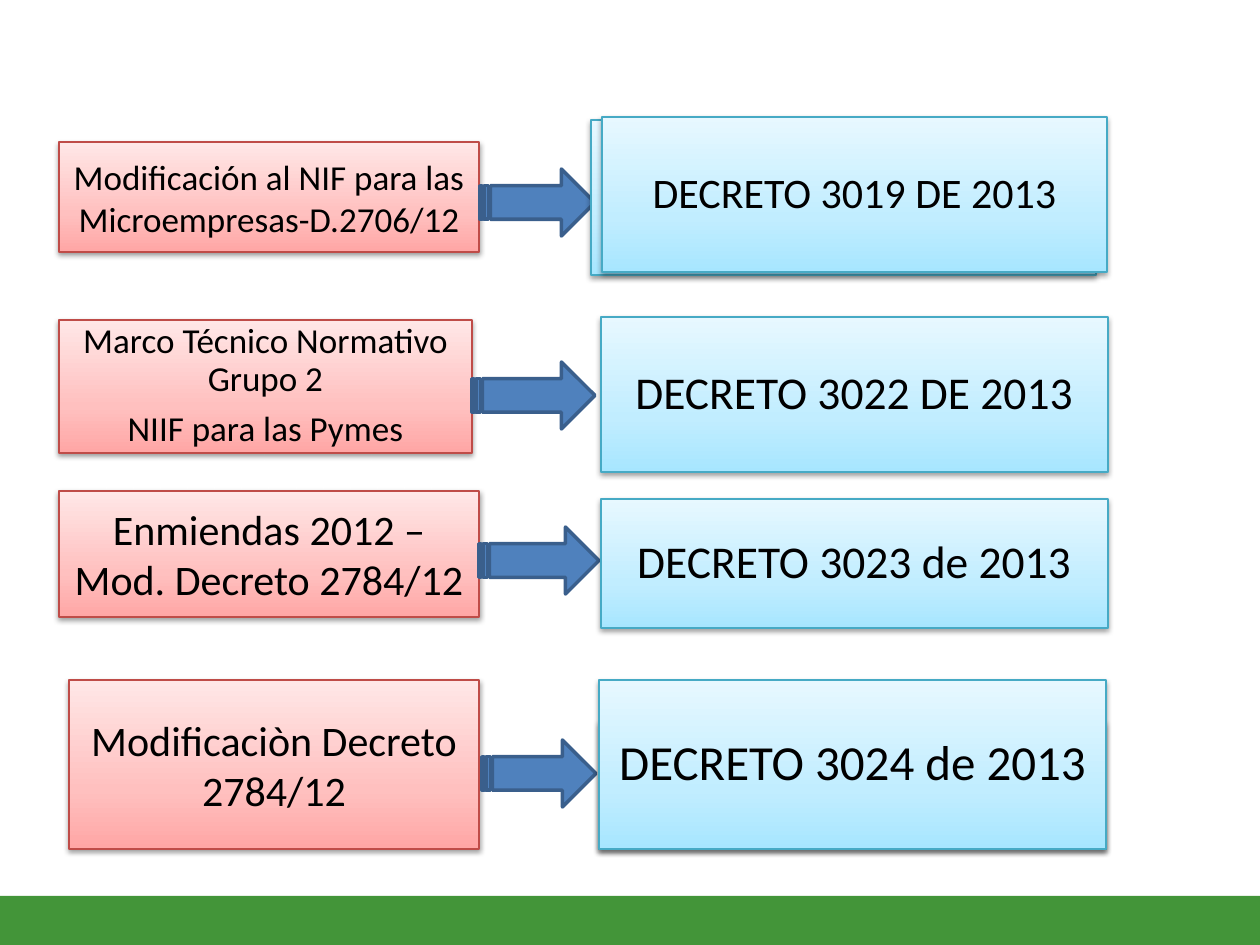
from dataclasses import dataclass
from typing import NamedTuple, Optional

from lxml import etree
from pptx import Presentation
from pptx.dml.color import RGBColor
from pptx.enum.shapes import MSO_SHAPE
from pptx.enum.text import MSO_ANCHOR, PP_ALIGN
from pptx.oxml import parse_xml
from pptx.oxml.ns import nsdecls
from pptx.util import Emu, Pt

RECT = MSO_SHAPE.RECTANGLE
ARROW = MSO_SHAPE.STRIPED_RIGHT_ARROW
MIDDLE = MSO_ANCHOR.MIDDLE
CENTER = PP_ALIGN.CENTER
PX = 914400 / 126


class Tint(NamedTuple):
    stops: tuple[tuple[int, str], ...]
    line: str


@dataclass(frozen=True)
class Theme:
    font: str = "Calibri"
    ink: str = "000000"
    bar: str = "439539"
    arrow: str = "4F81BD"
    edge: str = "3A5F8C"
    small: int = 20
    mid: int = 24
    large: int = 26
    huge: int = 28
    red: Tint = Tint(((0, "FFA6A5"), (35, "FFC0BF"), (100, "FFE7E7")), "BF4C48")
    blue: Tint = Tint(((0, "A7E6FF"), (35, "C1EDFF"), (100, "E7F8FF")), "46AAC5")


THEME = Theme()


class Box(NamedTuple):
    x: int
    y: int
    w: int
    h: int


class Label(NamedTuple):
    lines: tuple[str, ...]
    size: int
    tight: bool = True


class Row(NamedTuple):
    cause: Box
    topic: Label
    arrow: Box
    decree: Box
    title: Label
    back: Optional[Box] = None


ROWS = (
    Row(Box(59, 142, 420, 110),
        Label(("Modificación al NIF para las Microempresas-D.2706/12",), THEME.small, False),
        Box(480, 169, 115, 67), Box(602, 117, 505, 155),
        Label(("DECRETO 3019 DE 2013",), THEME.mid), Box(591, 120, 505, 155)),
    Row(Box(59, 320, 413, 133),
        Label(("Marco Técnico Normativo Grupo 2", "NIIF para las Pymes"), THEME.small),
        Box(472, 362, 123, 67), Box(601, 317, 507, 155),
        Label(("DECRETO 3022 DE 2013",), THEME.large)),
    Row(Box(59, 491, 420, 126),
        Label(("Enmiendas 2012 – Mod. Decreto 2784/12",), THEME.mid, False),
        Box(479, 527, 120, 67), Box(601, 499, 507, 129),
        Label(("DECRETO 3023 de 2013",), THEME.large)),
    Row(Box(69, 680, 410, 169),
        Label(("Modificaciòn Decreto 2784/12",), THEME.mid, False),
        Box(482, 740, 114, 67), Box(599, 680, 507, 169),
        Label(("DECRETO 3024 de 2013",), THEME.huge), Box(599, 722, 507, 127)),
)


def px(n: int) -> Emu:
    return Emu(round(n * PX))


def add_flat(slide, kind, box: Box, fill: str, edge: Optional[str] = None):
    shape = slide.shapes.add_shape(kind, *map(px, box))
    shape.shadow.inherit = False
    shape.fill.solid()
    shape.fill.fore_color.rgb = RGBColor.from_string(fill)
    if edge:
        shape.line.color.rgb = RGBColor.from_string(edge)
        shape.line.width = Pt(2)
    else:
        shape.line.fill.background()
    return shape


def shade(shape, stops: tuple[tuple[int, str], ...]) -> None:
    """Fill upward through the stops and cast a soft shadow below."""
    shape.fill.gradient()
    shape.fill.gradient_angle = 90
    props = shape.element.spPr
    marks = props.find(".//{*}gsLst")
    for old in list(marks):
        marks.remove(old)
    for pos, tone in stops:
        marks.append(parse_xml(
            f'<a:gs {nsdecls("a")} pos="{pos * 1000}"><a:srgbClr val="{tone}"/></a:gs>'))
    cast = etree.SubElement(
        props.find("{*}effectLst"), marks.tag.replace("gsLst", "outerShdw"),
        blurRad=str(Pt(3.1)), dist=str(Pt(1.6)), dir="5400000", rotWithShape="0")
    cast.append(parse_xml(
        f'<a:srgbClr {nsdecls("a")} val="{THEME.ink}"><a:alpha val="38000"/></a:srgbClr>'))


def add_text(shape, label: Label) -> None:
    frame = shape.text_frame
    frame.word_wrap = True
    frame.vertical_anchor = MIDDLE
    if label.tight:
        frame.margin_left = frame.margin_right = px(2)
        frame.margin_top = frame.margin_bottom = px(2)
    frame.text = "\n".join(label.lines)
    for para in frame.paragraphs:
        para.alignment = CENTER
        para.font.name = THEME.font
        para.font.size = Pt(label.size)
        para.font.color.rgb = RGBColor.from_string(THEME.ink)
        if label.tight:
            para.line_spacing = 0.9
            para.space_after = Pt(label.size * 0.35)


def add_card(slide, box: Box, tint: Tint, label: Optional[Label] = None) -> None:
    shape = add_flat(slide, RECT, box, tint.stops[0][1], tint.line)
    shape.line.width = Pt(0.75)
    shade(shape, tint.stops)
    if label:
        add_text(shape, label)


def add_row(slide, row: Row) -> None:
    add_card(slide, row.cause, THEME.red, row.topic)
    add_flat(slide, ARROW, row.arrow, THEME.arrow, THEME.edge)
    if row.back:
        add_card(slide, row.back, THEME.blue)
    add_card(slide, row.decree, THEME.blue, row.title)


def main() -> None:
    deck = Presentation()
    deck.slide_width, deck.slide_height = px(1260), px(945)
    slide = deck.slides.add_slide(deck.slide_layouts[6])
    add_flat(slide, RECT, Box(0, 896, 1260, 49), THEME.bar)
    for row in ROWS:
        add_row(slide, row)
    deck.save("out.pptx")


if __name__ == "__main__":
    main()
